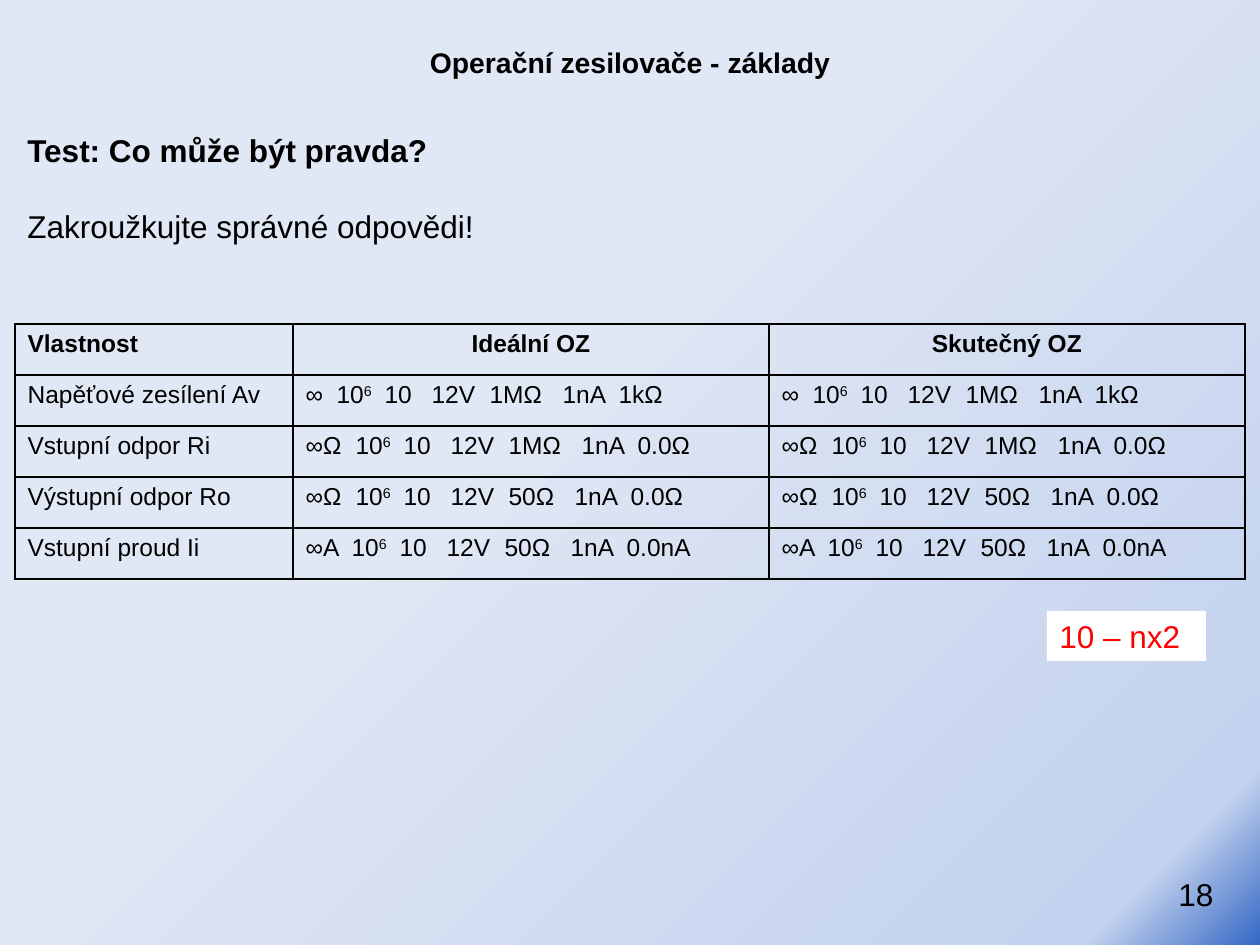
from dataclasses import dataclass

from lxml.etree import SubElement
from pptx import Presentation
from pptx.dml.color import RGBColor
from pptx.enum.shapes import MSO_SHAPE
from pptx.enum.text import MSO_ANCHOR, MSO_AUTO_SIZE, PP_ALIGN
from pptx.oxml.ns import qn
from pptx.slide import Slide
from pptx.util import Pt

EMU_PER_PX = 914400 / 126

BLACK = RGBColor(0x00, 0x00, 0x00)
WHITE = RGBColor(0xFF, 0xFF, 0xFF)
RED = RGBColor(0xFF, 0x00, 0x00)
CORNER_BLUE = RGBColor(0x34, 0x68, 0xC5)
MID_BLUE = RGBColor(0xC2, 0xD1, 0xED)
PALE_BLUE = RGBColor(0xE1, 0xE8, 0xF5)

HEADINGS = ["Vlastnost", "Ideální OZ", "Skutečný OZ"]
# property, answers, tab stop of the second answer, distance from there to the fifth gap
QUESTIONS = [
    ("Napěťové zesílení Av", ["∞", "10^6^", "10", "12V", "1MΩ", "1nA", "1kΩ"], 31, 226),
    ("Vstupní odpor Ri", ["∞Ω", "10^6^", "10", "12V", "1MΩ", "1nA", "0.0Ω"], 50, 226),
    ("Výstupní odpor Ro", ["∞Ω", "10^6^", "10", "12V", "50Ω", "1nA", "0.0Ω"], 50, 219),
    ("Vstupní proud Ii", ["∞A", "10^6^", "10", "12V", "50Ω", "1nA", "0.0nA"], 46, 219),
]


def px(length):
    return round(length * EMU_PER_PX)


def write(paragraph, text, size=18, color=BLACK, bold=False, align=PP_ALIGN.LEFT,
          font="Arial", before=0, tabs=()):
    """Fill a paragraph; text between a pair of ^ marks is superscript."""
    if tabs:
        tab_list = SubElement(paragraph._p.get_or_add_pPr(), qn("a:tabLst"))
        for stop in tabs:
            SubElement(tab_list, qn("a:tab"), pos=str(px(stop)), algn="l")
    paragraph.alignment = align
    if before:
        paragraph.space_before = Pt(before)
    for index, part in enumerate(text.split("^")):
        if not part:
            continue
        run = paragraph.add_run()
        run.text = part
        run.font.name = font
        run.font.size = Pt(size)
        run.font.bold = bold
        run.font.color.rgb = color
        if index % 2:
            run._r.get_or_add_rPr().set("baseline", "30000")


@dataclass
class Builder:
    slide: Slide
    font: str = "Arial"
    border: RGBColor = BLACK
    border_width: int = 1

    def background(self, stops):
        """Spread a gradient out of the bottom right corner."""
        self.slide.background.fill.gradient()
        gradient = self.slide.element.find(".//" + qn("a:gradFill"))
        for child in list(gradient):
            gradient.remove(child)
        stop_list = SubElement(gradient, qn("a:gsLst"))
        for percent, color in stops:
            stop = SubElement(stop_list, qn("a:gs"), pos=str(percent * 1000))
            SubElement(stop, qn("a:srgbClr"), val=str(color))
        circle = SubElement(gradient, qn("a:path"), path="circle")
        SubElement(circle, qn("a:fillToRect"), l="100000", t="100000")
        SubElement(gradient, qn("a:tileRect"), r="-100000", b="-100000")

    def title(self, text, left, top, width, height, **style):
        title = self.slide.shapes.title
        title.left, title.top = px(left), px(top)
        title.width, title.height = px(width), px(height)
        frame = title.text_frame
        frame.auto_size = MSO_AUTO_SIZE.NONE
        frame.vertical_anchor = MSO_ANCHOR.MIDDLE
        write(frame.paragraphs[0], text, font=self.font, **style)

    def text_box(self, left, top, width, height, wrap=True):
        box = self.slide.shapes.add_textbox(px(left), px(top), px(width), px(height))
        box.text_frame.word_wrap = wrap
        return box.text_frame

    def label(self, text, left, top, width, height, fill, **style):
        label = self.slide.shapes.add_shape(
            MSO_SHAPE.RECTANGLE, px(left), px(top), px(width), px(height))
        label.shadow.inherit = False
        label.fill.solid()
        label.fill.fore_color.rgb = fill
        label.line.fill.background()
        label.text_frame.vertical_anchor = MSO_ANCHOR.TOP
        write(label.text_frame.paragraphs[0], text, font=self.font, **style)

    def table(self, left, top, column_widths, row_height, row_count):
        table = self.slide.shapes.add_table(
            row_count, len(column_widths), px(left), px(top),
            px(sum(column_widths)), px(row_height * row_count)).table
        table.first_row = table.horz_banding = False
        for column, width in zip(table.columns, column_widths):
            column.width = px(width)
        for row in table.rows:
            row.height = px(row_height)
        for cell in table.iter_cells():
            self.outline(cell)
            cell.fill.background()
        return table

    def outline(self, cell):
        properties = cell._tc.get_or_add_tcPr()
        for side in ("a:lnL", "a:lnR", "a:lnT", "a:lnB"):
            line = SubElement(properties, qn(side), w=str(Pt(self.border_width)))
            solid = SubElement(line, qn("a:solidFill"))
            SubElement(solid, qn("a:srgbClr"), val=str(self.border))

    def cell(self, table, row, column, text, **style):
        paragraph = table.cell(row, column).text_frame.paragraphs[0]
        write(paragraph, text, size=14, font=self.font, **style)


def main():
    presentation = Presentation()
    presentation.slide_width, presentation.slide_height = px(1260), px(945)
    builder = Builder(presentation.slides.add_slide(presentation.slide_layouts[5]))

    builder.background([(0, CORNER_BLUE), (8, MID_BLUE), (60, PALE_BLUE)])
    builder.title("Operační zesilovače - základy", 63, 38, 1134, 48,
                  size=16.2, bold=True, align=PP_ALIGN.CENTER)

    page_number = builder.text_box(1166, 869, 64, 50, wrap=False)
    write(page_number.paragraphs[0], "18")

    task = builder.text_box(15, 125, 1215, 127)
    write(task.paragraphs[0], "Test: Co může být pravda?", bold=True)
    write(task.add_paragraph(), "Zakroužkujte správné odpovědi!", before=22)

    quiz = builder.table(15, 324, [278, 476, 476], 51, len(QUESTIONS) + 1)
    for column, heading in enumerate(HEADINGS):
        builder.cell(quiz, 0, column, heading, bold=True,
                     align=PP_ALIGN.CENTER if column else PP_ALIGN.LEFT)
    for row, (quantity, answers, start, fifth) in enumerate(QUESTIONS, 1):
        builder.cell(quiz, row, 0, quantity)
        tabs = [start + step for step in (0, 48, 95, 153, fifth, fifth + 56)]
        for column in (1, 2):
            builder.cell(quiz, row, column, "\t".join(answers), tabs=tabs)

    builder.label("10 – nx2", 1047, 611, 159, 50, fill=WHITE, color=RED)
    presentation.save("out.pptx")


if __name__ == "__main__":
    main()
